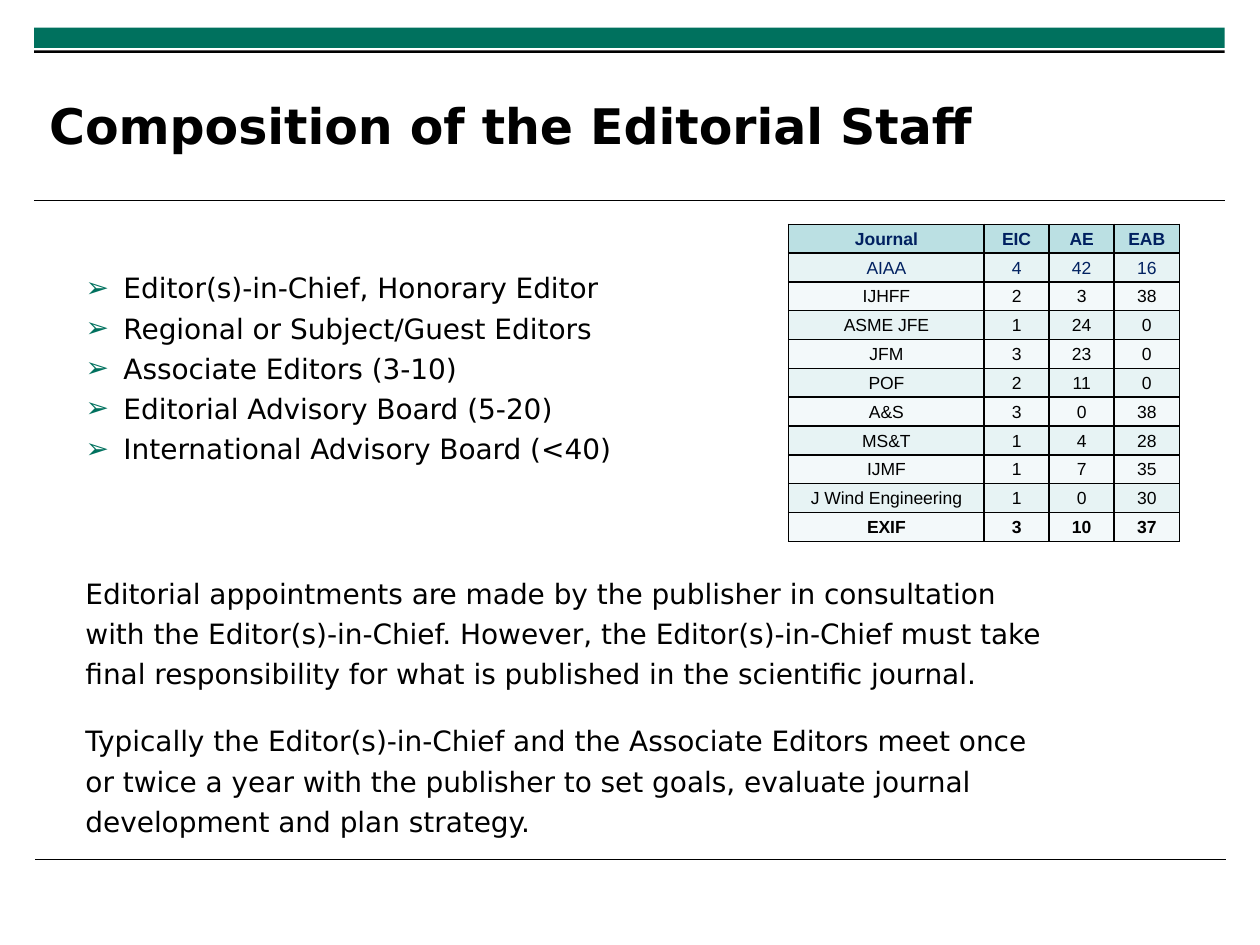
import pptx
import pptx.dml.color
import pptx.enum.shapes
import pptx.enum.text
import pptx.oxml
import pptx.oxml.ns
import pptx.util
from lxml import etree

RGBColor = pptx.dml.color.RGBColor
GREEN = RGBColor(0x00, 0x71, 0x5E)
BLACK = RGBColor(0x00, 0x00, 0x00)
NAVY = RGBColor(0x00, 0x20, 0x60)
HEADER_FILL = RGBColor(0xBB, 0xE0, 0xE3)
BAND_FILLS = (RGBColor(0xF3, 0xF9, 0xFA), RGBColor(0xE7, 0xF3, 0xF4))

SLIDE_WIDTH = pptx.util.Inches(10)
SLIDE_HEIGHT = pptx.util.Inches(7.5)
GRID_COLUMNS, GRID_ROWS = 100, 75
TEXT_FONT, TABLE_FONT = "DejaVu Sans", "Arial"

TITLE = "Composition of the Editorial Staff"
ROLES = (
    "Editor(s)-in-Chief, Honorary Editor",
    "Regional or Subject/Guest Editors",
    "Associate Editors (3-10)",
    "Editorial Advisory Board (5-20)",
    "International Advisory Board (<40)",
)
NOTES = (
    "Editorial appointments are made by the publisher in consultation with the "
    "Editor(s)-in-Chief. However, the Editor(s)-in-Chief must take final "
    "responsibility for what is published in the scientific journal.",
    "Typically the Editor(s)-in-Chief and the Associate Editors meet once or twice "
    "a year with the publisher to set goals, evaluate journal development and "
    "plan strategy.",
)
JOURNALS = (
    ("Journal", "EIC", "AE", "EAB"),
    ("AIAA", 4, 42, 16),
    ("IJHFF", 2, 3, 38),
    ("ASME JFE", 1, 24, 0),
    ("JFM", 3, 23, 0),
    ("POF", 2, 11, 0),
    ("A&S", 3, 0, 38),
    ("MS&T", 1, 4, 28),
    ("IJMF", 1, 7, 35),
    ("J Wind Engineering", 1, 0, 30),
    ("EXIF", 3, 10, 37),
)
COLUMN_SHARES = (3, 1, 1, 1)


def grid_box(column, row, columns, rows):
    """Turn grid columns and rows into left, top, width and height."""
    return (
        round(SLIDE_WIDTH * column / GRID_COLUMNS),
        round(SLIDE_HEIGHT * row / GRID_ROWS),
        round(SLIDE_WIDTH * columns / GRID_COLUMNS),
        round(SLIDE_HEIGHT * rows / GRID_ROWS),
    )


def place(shape, box):
    shape.left, shape.top, shape.width, shape.height = box


def format_paragraph(paragraph, size, name=TEXT_FONT, color=BLACK, bold=False):
    for run in paragraph.runs:
        run.font.size = pptx.util.Pt(size)
        run.font.name = name
        run.font.color.rgb = color
        run.font.bold = bold


def add_bar(slide, box, color):
    bar = slide.shapes.add_shape(pptx.enum.shapes.MSO_SHAPE.RECTANGLE, *box)
    bar.shadow.inherit = False
    bar.fill.solid()
    bar.fill.fore_color.rgb = color
    bar.line.fill.background()


def add_rule(slide, box):
    left, top, width, height = box
    rule = slide.shapes.add_connector(
        pptx.enum.shapes.MSO_CONNECTOR.STRAIGHT, left, top, left + width, top + height
    )
    rule.line.color.rgb = BLACK
    rule.line.width = pptx.util.Pt(0.6)
    etree.SubElement(rule._element.spPr, pptx.oxml.ns.qn("a:effectLst"))


def add_frame(slide):
    add_bar(slide, grid_box(2.7, 2.2, 94.5, 1.6), GREEN)
    add_bar(slide, grid_box(2.7, 4, 94.5, 0.2), BLACK)
    for column, row in ((2.7, 15.9), (2.8, 68.2)):
        add_rule(slide, grid_box(column, row, 94.5, 0))


def fill_title(title, box):
    place(title, box)
    frame = title.text_frame
    frame.text = TITLE
    frame.word_wrap = True
    frame.auto_size = pptx.enum.text.MSO_AUTO_SIZE.NONE
    frame.vertical_anchor = pptx.enum.text.MSO_ANCHOR.MIDDLE
    frame.margin_left = frame.margin_right = frame.margin_top = frame.margin_bottom = 0
    frame.paragraphs[0].alignment = pptx.enum.text.PP_ALIGN.LEFT
    format_paragraph(frame.paragraphs[0], 28, bold=True)


def set_bullet(paragraph, indent):
    properties = paragraph._p.get_or_add_pPr()
    properties.set("marL", str(indent))
    properties.set("indent", str(-indent))
    color = etree.SubElement(properties, pptx.oxml.ns.qn("a:buClr"))
    etree.SubElement(color, pptx.oxml.ns.qn("a:srgbClr"), val=str(GREEN))
    etree.SubElement(properties, pptx.oxml.ns.qn("a:buChar"), char="➢")


def fill_roles(body, box):
    place(body, box)
    frame = body.text_frame
    frame.text = "\n".join(ROLES)
    frame.auto_size = pptx.enum.text.MSO_AUTO_SIZE.NONE
    frame.vertical_anchor = pptx.enum.text.MSO_ANCHOR.TOP
    indent = round(SLIDE_WIDTH * 3 / GRID_COLUMNS)
    for index, paragraph in enumerate(frame.paragraphs):
        set_bullet(paragraph, indent)
        paragraph.space_before = pptx.util.Pt(3.8 if index else 0)
        format_paragraph(paragraph, 16)


def add_notes_text(slide, box):
    frame = slide.shapes.add_textbox(*box).text_frame
    frame.word_wrap = True
    frame.text = "\n".join(NOTES)
    for index, paragraph in enumerate(frame.paragraphs):
        paragraph.line_spacing = 1.2
        paragraph.space_before = pptx.util.Pt(15.4 if index else 0)
        format_paragraph(paragraph, 16)


def add_borders(cell):
    properties = cell._tc.get_or_add_tcPr()
    for side in ("lnL", "lnR", "lnT", "lnB"):
        line = etree.SubElement(
            properties, pptx.oxml.ns.qn(f"a:{side}"), w=str(pptx.util.Pt(1))
        )
        fill = etree.SubElement(line, pptx.oxml.ns.qn("a:solidFill"))
        etree.SubElement(fill, pptx.oxml.ns.qn("a:srgbClr"), val=str(BLACK))


def format_cell(cell, row_index):
    is_header = row_index == 0
    add_borders(cell)
    cell.fill.solid()
    cell.fill.fore_color.rgb = HEADER_FILL if is_header else BAND_FILLS[row_index % 2]
    cell.vertical_anchor = pptx.enum.text.MSO_ANCHOR.MIDDLE
    cell.margin_left = cell.margin_right = cell.margin_top = pptx.util.Inches(0.01)
    cell.margin_bottom = 0
    paragraph = cell.text_frame.paragraphs[0]
    paragraph.alignment = pptx.enum.text.PP_ALIGN.CENTER
    format_paragraph(
        paragraph, 10, TABLE_FONT,
        color=NAVY if row_index < 2 else BLACK,
        bold=is_header or row_index == len(JOURNALS) - 1,
    )


def add_journal_table(slide, box):
    width, height = box[2:]
    table = slide.shapes.add_table(len(JOURNALS), len(COLUMN_SHARES), *box).table
    table.horz_banding = False
    for column, share in zip(table.columns, COLUMN_SHARES):
        column.width = round(width * share / sum(COLUMN_SHARES))
    for row_index, (row, values) in enumerate(zip(table.rows, JOURNALS)):
        row.height = round(height / len(JOURNALS))
        for cell, value in zip(row.cells, values):
            cell.text = str(value)
            format_cell(cell, row_index)


def main():
    presentation = pptx.Presentation()
    presentation.slide_width, presentation.slide_height = SLIDE_WIDTH, SLIDE_HEIGHT
    slide = presentation.slides.add_slide(presentation.slide_layouts[1])

    # Bars and rules
    add_frame(slide)
    # Title and list of roles
    fill_title(slide.shapes.title, grid_box(3.9, 5.3, 75.2, 9.2))
    fill_roles(slide.placeholders[1], grid_box(5.8, 21, 50.5, 18.8))
    # Explanatory text
    add_notes_text(slide, grid_box(5.8, 44.7, 79.2, 22.6))
    # Staff numbers by journal
    add_journal_table(slide, grid_box(62.6, 17.8, 31, 25.2))

    presentation.save("out.pptx")


if __name__ == "__main__":
    main()
